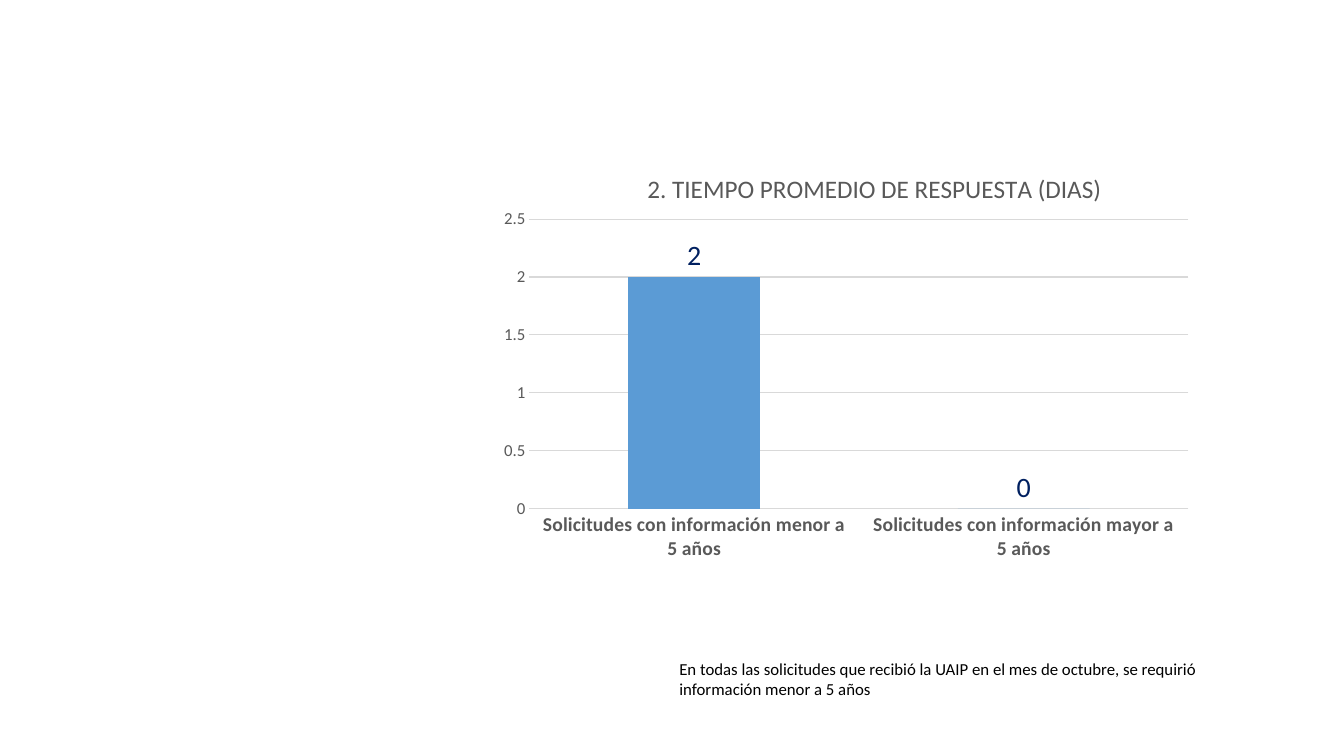
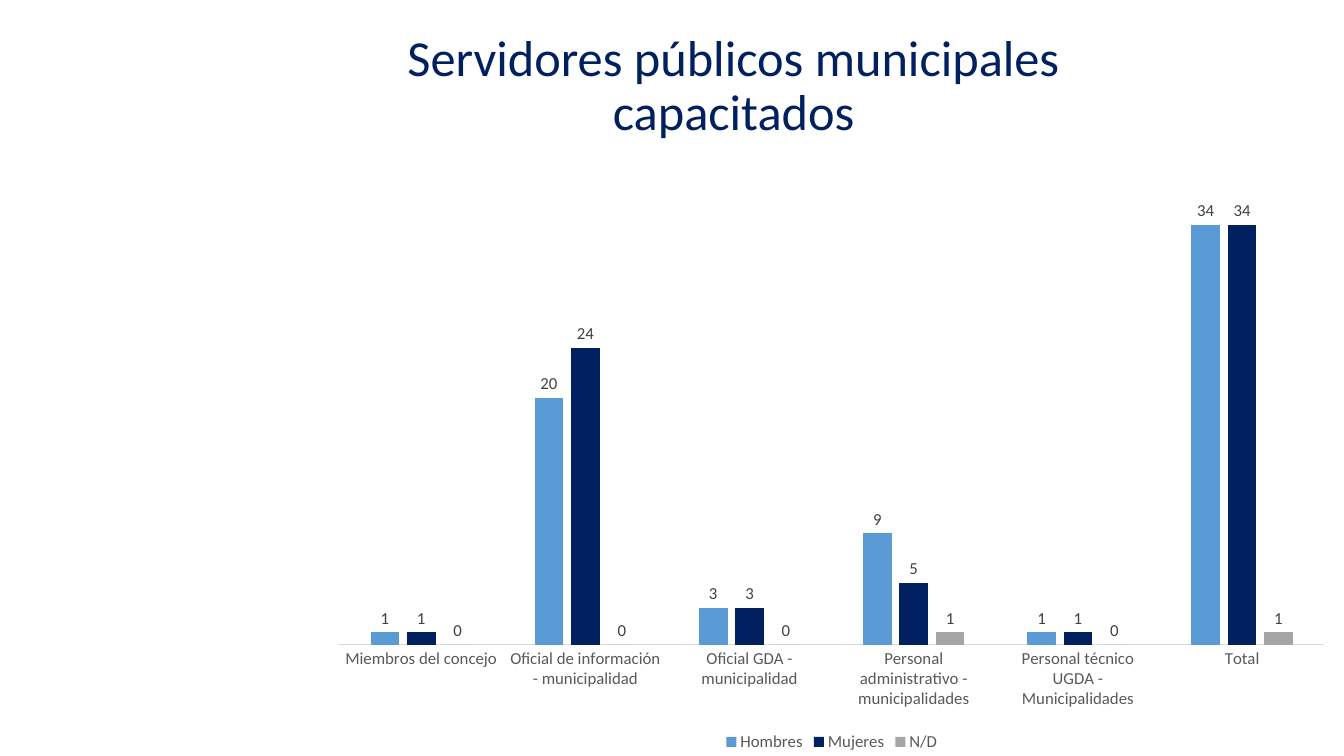
from lxml import etree
from pptx import Presentation
from pptx.chart.data import CategoryChartData
from pptx.dml.color import RGBColor
from pptx.enum.chart import XL_CHART_TYPE, XL_LABEL_POSITION, XL_LEGEND_POSITION, XL_TICK_MARK
from pptx.enum.text import MSO_ANCHOR, MSO_AUTO_SIZE, PP_ALIGN
from pptx.oxml.ns import qn
from pptx.util import Cm, Pt

COLUMN = XL_CHART_TYPE.COLUMN_CLUSTERED
OUTSIDE = XL_LABEL_POSITION.OUTSIDE_END
BOTTOM = XL_LEGEND_POSITION.BOTTOM
NO_TICK = XL_TICK_MARK.NONE
MIDDLE = MSO_ANCHOR.MIDDLE
GROW = MSO_AUTO_SIZE.SHAPE_TO_FIT_TEXT
NO_FIT = MSO_AUTO_SIZE.NONE
CENTER = PP_ALIGN.CENTER

FACE = "Calibri"
BLACK, NAVY, BLUE, SILVER = "000000", "002060", "5B9BD5", "A5A5A5"
GREY, DARK, PALE = "595959", "404040", "D9D9D9"


def paint(color, value):
    color.rgb = RGBColor.from_string(value)


def style(font, size, color, bold=False):
    font.name, font.size, font.bold = FACE, Pt(size), bold
    paint(font.color, color)


def rule(line, color):
    line.width = Pt(0.75)
    line.fill.solid()
    paint(line.color, color)


def place(node, index, **parts):
    layout = node.find(qn("c:layout"))
    if layout is None:
        layout = etree.Element(qn("c:layout"))
        node.insert(index, layout)
    manual = etree.SubElement(layout, qn("c:manualLayout"))
    if "w" in parts:
        etree.SubElement(manual, qn("c:layoutTarget"), val="inner")
    for mode in ("xMode", "yMode"):
        etree.SubElement(manual, qn("c:" + mode), val="edge")
    for key, value in parts.items():
        etree.SubElement(manual, qn("c:" + key), val=str(value))


def add_title(slide, text, box):
    title = slide.shapes.title
    title.left, title.top, title.width, title.height = map(Cm, box)
    frame = title.text_frame
    frame.text = text
    frame.auto_size, frame.vertical_anchor = NO_FIT, MIDDLE
    para = frame.paragraphs[0]
    para.alignment, para.line_spacing = CENTER, 0.9
    style(para.font, 36, NAVY)


def add_note(slide, text, box):
    frame = slide.shapes.add_textbox(*map(Cm, box)).text_frame
    frame.word_wrap, frame.auto_size = True, GROW
    frame.text = text
    style(frame.paragraphs[0].font, 12, BLACK)


def add_columns(slide, box, cats, series, gap, lap, plot, label):
    data = CategoryChartData(number_format="General")
    data.categories = cats
    for name, values, _ in series:
        data.add_series(name, values)
    chart = slide.shapes.add_chart(COLUMN, *map(Cm, box), data).chart
    style(chart.font, 10, BLACK)
    chart.has_title = chart.has_legend = False
    bars = chart.plots[0]
    bars.gap_width, bars.overlap, bars.vary_by_categories = gap, lap, False
    for item, (_, _, color) in zip(bars.series, series):
        item.format.fill.solid()
        paint(item.format.fill.fore_color, color)
        labels = item.data_labels
        labels.show_value, labels.position = True, OUTSIDE
        style(labels.font, *label)
    for axis in (chart.category_axis, chart.value_axis):
        axis.major_tick_mark = axis.minor_tick_mark = NO_TICK
        style(axis.tick_labels.font, 12, GREY)
    place(chart.element.find(".//" + qn("c:plotArea")), 0, **plot)
    return chart


def add_days(slide):
    chart = add_columns(
        slide, (12.45, 3.45, 17.86, 10.9),
        ["Solicitudes con información menor a 5 años",
         "Solicitudes con información mayor a 5 años"],
        [("Series 1", (2, 0), BLUE)],
        150, 0, dict(x=0.05, y=0.19, w=0.93, h=0.67), (20, NAVY))
    chart.has_title = True
    frame = chart.chart_title.text_frame
    frame.text = "2. TIEMPO PROMEDIO DE RESPUESTA (DIAS)"
    style(frame.paragraphs[0].font, 18, GREY)
    place(chart.element.find(".//" + qn("c:title")), 1, x=0.21, y=0.07)
    style(chart.category_axis.tick_labels.font, 14, GREY, True)
    scale = chart.value_axis
    scale.minimum_scale, scale.maximum_scale, scale.major_unit = 0, 2.5, 0.5
    rule(scale.major_gridlines.format.line, PALE)
    for axis in (chart.category_axis, scale):
        axis.format.line.fill.background()


def add_staff(slide):
    chart = add_columns(
        slide, (8.03, 3.48, 25.86, 15.57),
        ["Miembros del concejo", "Oficial de información - municipalidad",
         "Oficial GDA - municipalidad",
         "Personal administrativo - municipalidades",
         "Personal técnico UGDA - Municipalidades", "Total"],
        [("Hombres", (1, 20, 3, 9, 1, 34), BLUE),
         ("Mujeres", (1, 24, 3, 5, 1, 34), NAVY),
         ("N/D", (0, 0, 0, 1, 0, 1), SILVER)],
        219, -27, dict(x=0.02, y=0.02, w=0.96, h=0.8), (12, DARK))
    rule(chart.category_axis.format.line, PALE)
    scale = chart.value_axis
    scale.minimum_scale, scale.maximum_scale = 0, 40
    scale.has_major_gridlines = scale.visible = False
    chart.has_legend = True
    chart.legend.position, chart.legend.include_in_layout = BOTTOM, False
    style(chart.legend.font, 12, GREY)


def main():
    deck = Presentation()
    deck.slide_width, deck.slide_height = Cm(33.87), Cm(19.05)
    bare, titled = deck.slide_layouts[6], deck.slide_layouts[5]

    slide = deck.slides.add_slide(bare)
    add_note(slide, "En todas las solicitudes que recibió la UAIP en el mes de "
             "octubre, se requirió información menor a 5 años",
             (16.87, 16.48, 14.73, 1.27))
    add_days(slide)

    slide = deck.slides.add_slide(titled)
    add_title(slide, "Servidores públicos municipales capacitados",
              (9.98, 0.69, 17.02, 3.02))
    add_staff(slide)

    deck.save("out.pptx")


if __name__ == "__main__":
    main()
